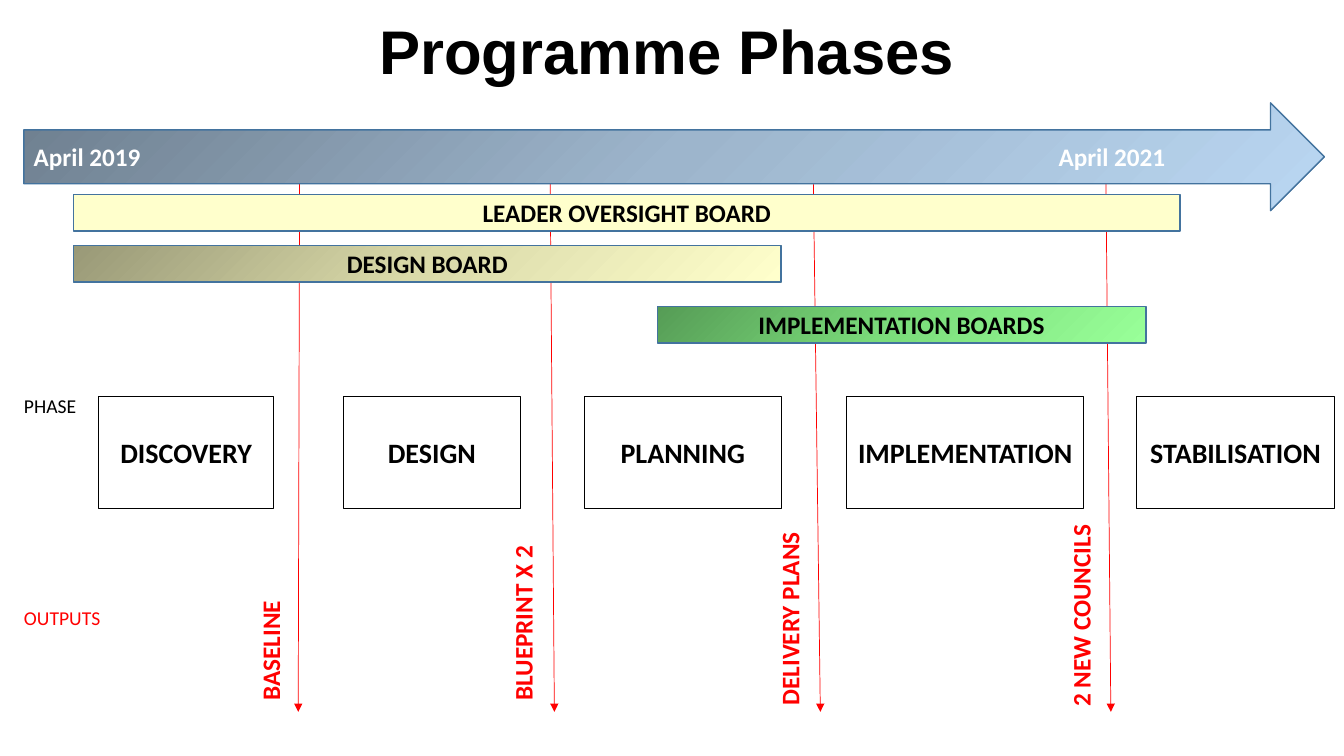
"""Build the Programme Phases timeline slide."""
from copy import deepcopy

from lxml.etree import SubElement
from pptx import Presentation
from pptx.dml.color import RGBColor
from pptx.enum.shapes import MSO_CONNECTOR, MSO_SHAPE
from pptx.enum.text import MSO_ANCHOR, PP_ALIGN
from pptx.oxml.ns import qn
from pptx.util import Pt

BLACK = RGBColor(0x00, 0x00, 0x00)
WHITE = RGBColor(0xFF, 0xFF, 0xFF)
RED = RGBColor(0xFF, 0x00, 0x00)
EDGE_BLUE = RGBColor(0x43, 0x73, 0x9E)
CREAM = RGBColor(0xFF, 0xFF, 0xCC)
BLUES = [RGBColor(0x6E, 0x7F, 0x8F), RGBColor(0x9D, 0xB5, 0xCC), RGBColor(0xBA, 0xD7, 0xF2)]
SANDS = [RGBColor(0x99, 0x99, 0x77), RGBColor(0xDA, 0xDA, 0xA9), CREAM]
GREENS = [RGBColor(0x56, 0x9C, 0x56), RGBColor(0x7B, 0xDD, 0x7B), RGBColor(0x99, 0xFF, 0x99)]


def write(shape, text, size=18, color=BLACK, bold=True, font="Calibri",
          align=PP_ALIGN.LEFT, anchor=MSO_ANCHOR.MIDDLE, tab=None, vert=None, spacing=None):
    frame = shape.text_frame
    frame.word_wrap = True
    frame.vertical_anchor = anchor
    if vert:
        frame._txBody.bodyPr.set("vert", vert)
    paragraph = frame.paragraphs[0]
    paragraph.alignment = align
    if spacing:
        paragraph.line_spacing = spacing
    if tab:
        tabs = SubElement(paragraph._p.get_or_add_pPr(), qn("a:tabLst"))
        SubElement(tabs, qn("a:tab"), pos=str(Pt(tab)), algn="l")
    run = paragraph.add_run()
    run.text = text
    run.font.name = font
    run.font.size = Pt(size)
    run.font.bold = bold
    run.font.color.rgb = color


def add_block(kind, left, top, width, height, colors, edge, edge_width):
    block = slide.shapes.add_shape(kind, Pt(left), Pt(top), Pt(width), Pt(height))
    block.shadow.inherit = False
    block.line.color.rgb = edge
    block.line.width = Pt(edge_width)
    if not colors:
        block.fill.background()
    elif len(colors) == 1:
        block.fill.solid()
        block.fill.fore_color.rgb = colors[0]
    else:
        block.fill.gradient()
        stop_list = block._element.spPr.find(qn("a:gradFill")).find(qn("a:gsLst"))
        stop_list.insert(1, deepcopy(stop_list[0]))
        for stop, color, position in zip(block.fill.gradient_stops, colors, (0, 0.5, 1)):
            stop.color.rgb = color
            stop.position = position
        block.fill.gradient_angle = 315
    return block


prs = Presentation()
prs.slide_width = Pt(960)
prs.slide_height = Pt(540)
slide = prs.slides.add_slide(prs.slide_layouts[6])

phases = [
    ("DISCOVERY", 70.5, 125),
    ("DESIGN", 245.5, 126),
    ("PLANNING", 417.5, 140.5),
    ("IMPLEMENTATION", 605, 169),
    ("STABILISATION", 812, 141),
]
for phase, left, width in phases:
    box = add_block(MSO_SHAPE.RECTANGLE, left, 283, width, 80, None, BLACK, 0.75)
    write(box, phase, size=20, align=PP_ALIGN.CENTER)

for heading, top, color in [("PHASE", 278, BLACK), ("OUTPUTS", 429.5, RED)]:
    row_label = slide.shapes.add_textbox(Pt(10), Pt(top), Pt(98), Pt(25))
    write(row_label, heading, size=14, color=color, bold=False, anchor=MSO_ANCHOR.TOP)

outputs = [
    ("BASELINE", 178.5, 507.5, 214, 213),
    ("BLUEPRINT X 2", 359, 507.5, 393, 396),
    ("DELIVERY PLANS", 549.5, 511, 581, 586),
    ("2 NEW COUNCILS", 757.5, 512, 790, 793.5),
]
for output, left, bottom, start_x, end_x in outputs:
    milestone = slide.shapes.add_connector(
        MSO_CONNECTOR.STRAIGHT, Pt(start_x), Pt(131), Pt(end_x), Pt(508.5))
    milestone.line.color.rgb = RED
    milestone.line.width = Pt(0.5)
    SubElement(milestone.line._get_or_add_ln(), qn("a:tailEnd"), type="triangle")
    SubElement(milestone._element.spPr, qn("a:effectLst"))
    output_label = slide.shapes.add_textbox(Pt(left), Pt(bottom - 160), Pt(36), Pt(160))
    write(output_label, output, color=RED, anchor=MSO_ANCHOR.TOP, vert="vert270")

timeline = add_block(MSO_SHAPE.RIGHT_ARROW, 17, 73.5, 929, 77, BLUES, EDGE_BLUE, 1)
write(timeline, "April 2019\tApril 2021", color=WHITE, tab=732)

boards = [
    ("DESIGN BOARD", 52.5, 175.5, 505.5, SANDS),
    ("IMPLEMENTATION BOARDS", 469.5, 219, 349, GREENS),
    ("LEADER OVERSIGHT BOARD", 52.5, 139, 790.5, [CREAM]),
]
for board, left, top, width, colors in boards:
    bar = add_block(MSO_SHAPE.RECTANGLE, left, top, width, 26, colors, EDGE_BLUE, 1)
    write(bar, board, align=PP_ALIGN.CENTER)

title = slide.shapes.add_textbox(Pt(62.5), Pt(-13.5), Pt(828), Pt(104.5))
write(title, "Programme Phases", size=44, font="Arial", align=PP_ALIGN.CENTER, spacing=0.9)

prs.save("out.pptx")
